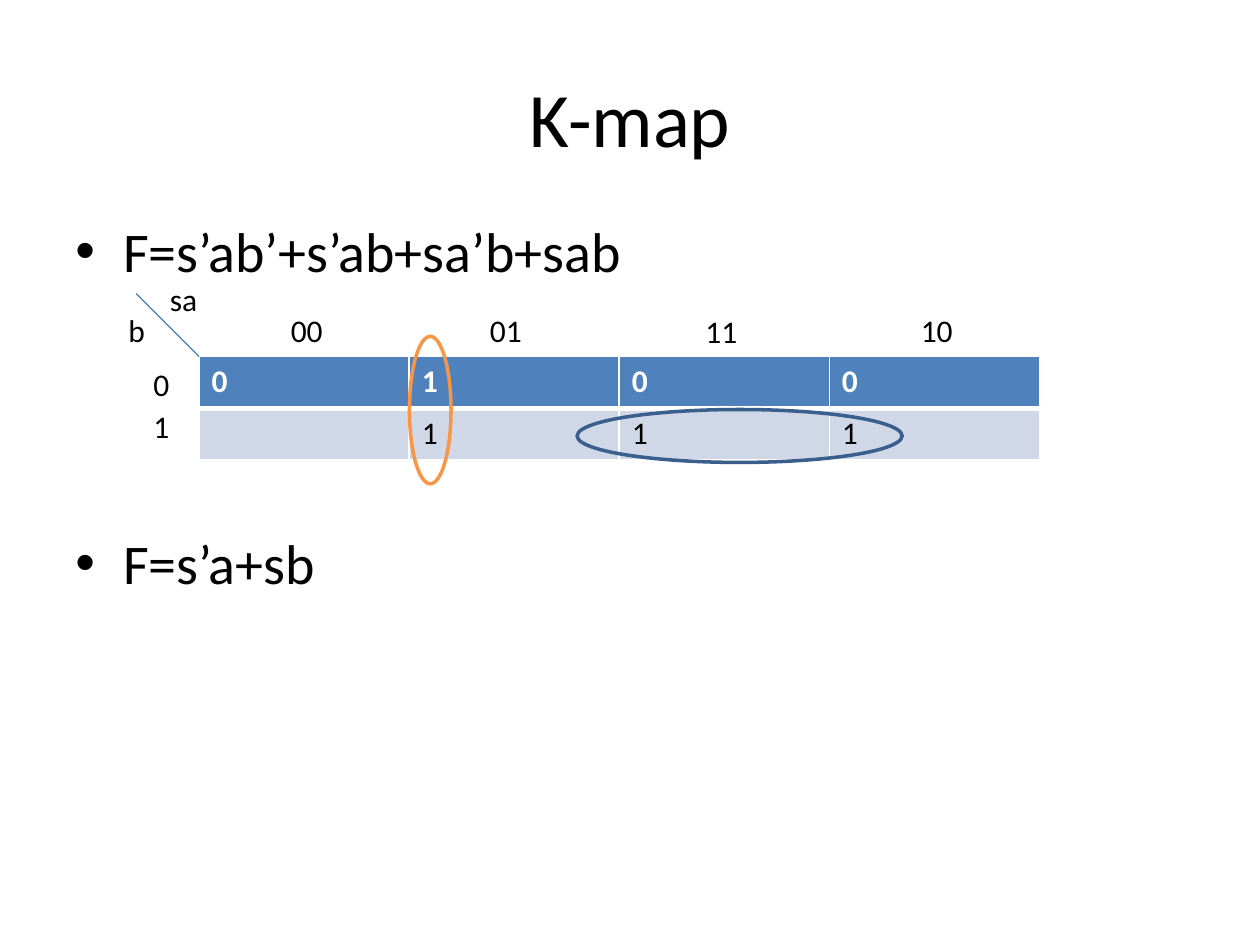
import pptx
import pptx.util
import pptx.dml.color
import pptx.enum.shapes
import pptx.enum.text
import pptx.oxml
import pptx.oxml.ns
from lxml import etree

Inches, Pt = pptx.util.Inches, pptx.util.Pt
PP_ALIGN = pptx.enum.text.PP_ALIGN
ANCHOR = pptx.enum.text.MSO_ANCHOR
qn = pptx.oxml.ns.qn

COLORS = {"text": "000000", "white": "FFFFFF", "header": "4F81BD", "band": "D0D8E8",
          "diagonal": "4B7EBC", "orange": "F79646", "navy": "3A5F8C"}
FONT = "Calibri"

TITLE = "K-map"
EQUATIONS = [("F=s’ab’+s’ab+sa’b+sab", 0), ("F=s’a+sb", 140)]  # text, space before in points
ROWS = [("0", "1", "0", "0"), ("", "1", "1", "1")]
ROW_STYLES = [  # fill, text colour, bold, top and bottom border widths
    ("header", "white", True, 1, 3),
    ("band", "text", False, 3, 1),
]
LABELS = [  # text, left, top, width
    ("00", 2.21, 2.42, 0.46), ("01", 3.79, 2.42, 0.46),
    ("11", 5.5, 2.43, 0.46), ("10", 7.21, 2.42, 0.46),
    ("0", 1.12, 2.85, 0.33), ("1", 1.12, 3.18, 0.33),
    ("sa", 1.25, 2.17, 0.42), ("b", 0.92, 2.42, 0.34),
]
GROUPS = [  # left, top, width, height, colour
    (3.25, 2.67, 0.33, 1.17, "orange"),
    (4.58, 3.25, 2.58, 0.42, "navy"),
]
MAP_LEFT, MAP_TOP, MAP_WIDTH, ROW_HEIGHT = 1.58, 2.83, 6.67, 0.41
DIAGONAL = 0.5


def rgb(name):
    return pptx.dml.color.RGBColor.from_string(COLORS[name])


def write(p, text, size=18, color="text", bold=False, align=PP_ALIGN.LEFT):
    p.alignment = align
    r = p.add_run()
    r.text = text
    r.font.name, r.font.size, r.font.bold = FONT, Pt(size), bold
    r.font.color.rgb = rgb(color)


def add_bullet(p, indent):
    pPr = p._p.get_or_add_pPr()
    pPr.set("marL", str(Inches(indent)))
    pPr.set("indent", str(-Inches(indent)))
    etree.SubElement(pPr, qn("a:buFont")).set("typeface", "Arial")
    etree.SubElement(pPr, qn("a:buChar")).set("char", "•")


def add_borders(cell, top, bottom):
    tcPr = cell._tc.get_or_add_tcPr()
    for side, width in (("L", 1), ("R", 1), ("T", top), ("B", bottom)):
        ln = etree.SubElement(tcPr, qn(f"a:ln{side}"), w=str(Pt(width)))
        fill = etree.SubElement(ln, qn("a:solidFill"))
        etree.SubElement(fill, qn("a:srgbClr")).set("val", COLORS["white"])


def add_equations(s):
    tf = s.shapes.add_textbox(Inches(0.5), Inches(1.67), Inches(9), Inches(4.95)).text_frame
    tf.word_wrap = True
    for i, (text, space) in enumerate(EQUATIONS):
        p = tf.add_paragraph() if i else tf.paragraphs[0]
        p.space_before = Pt(space)
        add_bullet(p, 0.38)
        write(p, text, size=32)


def add_map(s):
    table = s.shapes.add_table(len(ROWS), len(ROWS[0]), Inches(MAP_LEFT), Inches(MAP_TOP),
                               Inches(MAP_WIDTH), Inches(ROW_HEIGHT * len(ROWS))).table
    table.first_row = table.horz_banding = False
    for i, (values, style) in enumerate(zip(ROWS, ROW_STYLES)):
        fill, color, bold, top, bottom = style
        table.rows[i].height = Inches(ROW_HEIGHT)
        for j, value in enumerate(values):
            cell = table.cell(i, j)
            add_borders(cell, top, bottom)
            cell.fill.solid()
            cell.fill.fore_color.rgb = rgb(fill)
            if value:
                write(cell.text_frame.paragraphs[0], value, color=color, bold=bold)


def add_label(s, text, left, top, width):
    tf = s.shapes.add_textbox(Inches(left), Inches(top), Inches(width), Inches(0.4)).text_frame
    tf.word_wrap = False
    tf.auto_size = pptx.enum.text.MSO_AUTO_SIZE.SHAPE_TO_FIT_TEXT
    write(tf.paragraphs[0], text)


def add_diagonal(s):
    line = s.shapes.add_connector(
        pptx.enum.shapes.MSO_CONNECTOR.STRAIGHT,
        Inches(MAP_LEFT - DIAGONAL), Inches(MAP_TOP - DIAGONAL), Inches(MAP_LEFT), Inches(MAP_TOP))
    line.line.color.rgb = rgb("diagonal")
    line.line.width = Pt(0.75)
    etree.SubElement(line._element.spPr, qn("a:effectLst"))


def add_group(s, left, top, width, height, color):
    sp = s.shapes.add_shape(pptx.enum.shapes.MSO_SHAPE.OVAL, Inches(left), Inches(top),
                            Inches(width), Inches(height))
    sp.shadow.inherit = False
    sp.fill.background()
    sp.line.color.rgb = rgb(color)
    sp.line.width = Pt(2)


def main():
    prs = pptx.Presentation()
    prs.slide_width, prs.slide_height = Inches(10), Inches(7.5)
    s = prs.slides.add_slide(prs.slide_layouts[5])
    title = s.shapes.title
    title.left, title.top, title.width, title.height = map(Inches, (0.5, 0.3, 9, 1.25))
    title.text_frame.vertical_anchor = ANCHOR.MIDDLE
    write(title.text_frame.paragraphs[0], TITLE, size=44, align=PP_ALIGN.CENTER)
    add_equations(s)
    add_map(s)
    for label in LABELS:
        add_label(s, *label)
    add_diagonal(s)
    for group in GROUPS:
        add_group(s, *group)
    prs.save("out.pptx")


if __name__ == "__main__":
    main()
